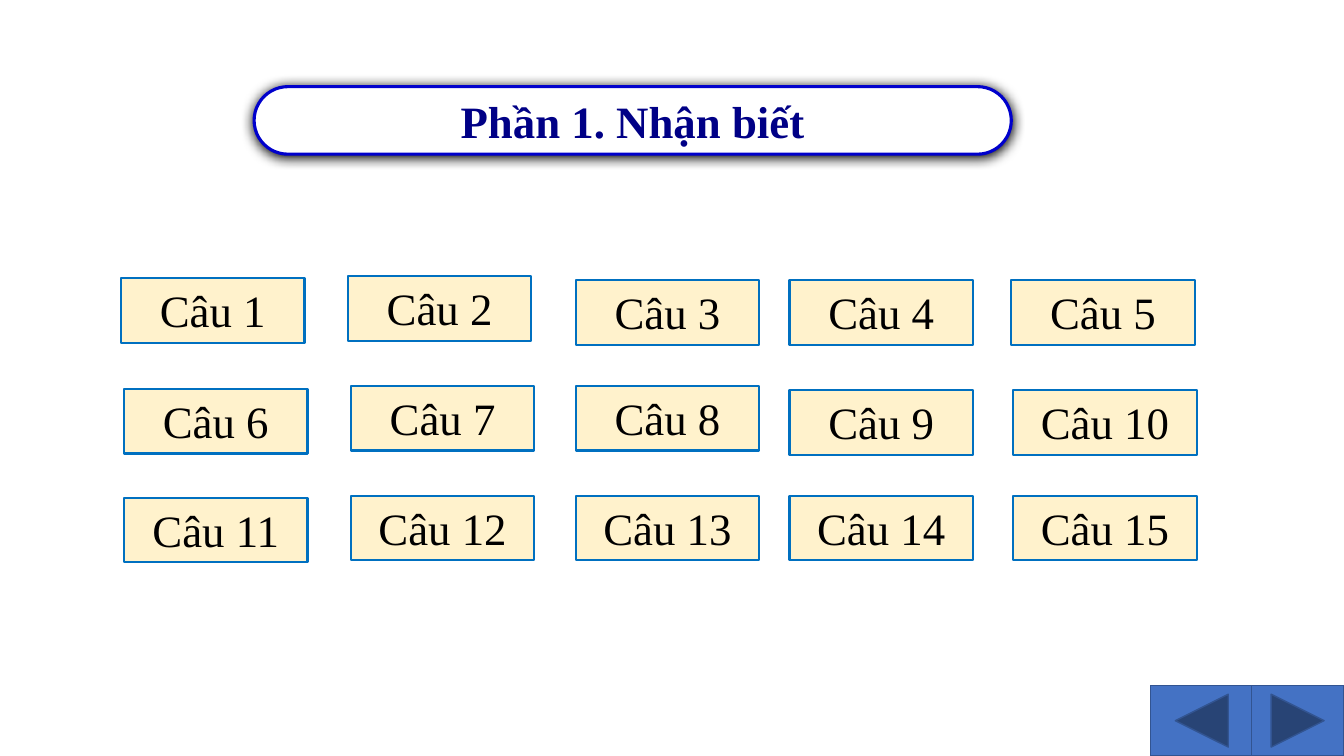
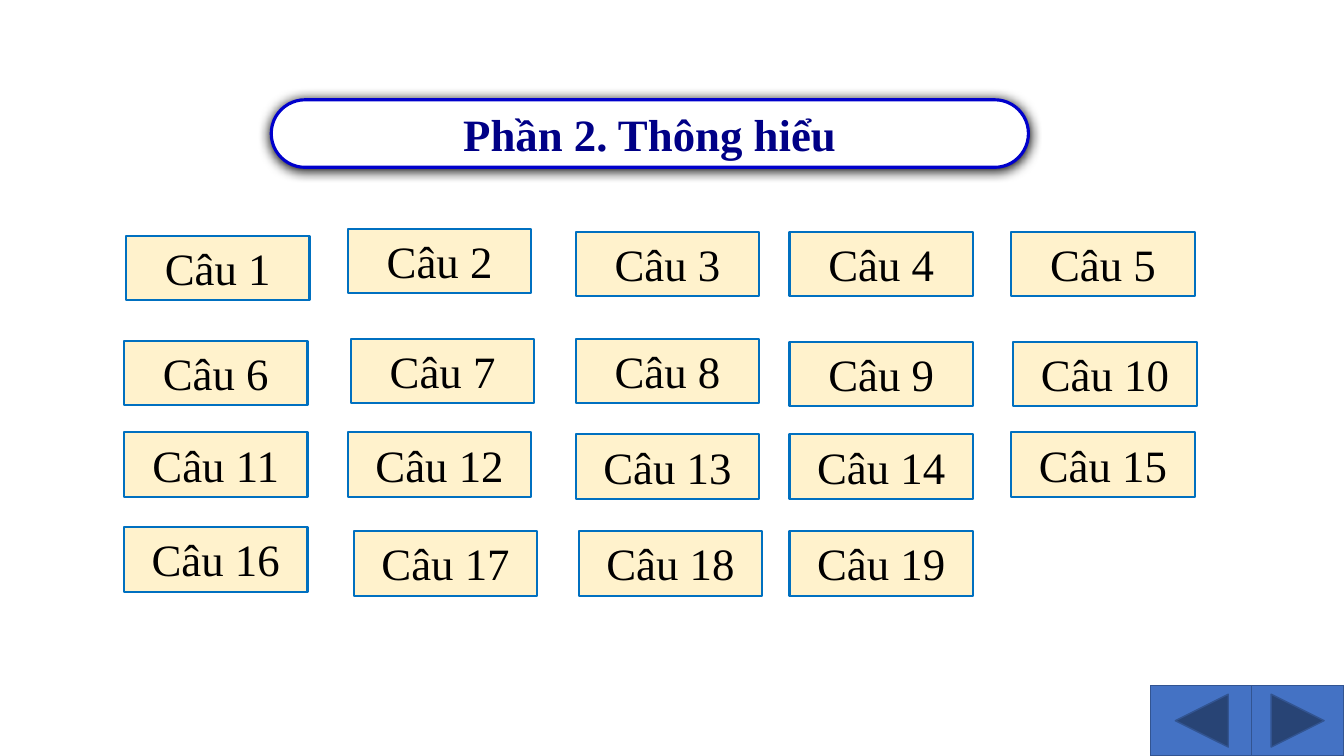
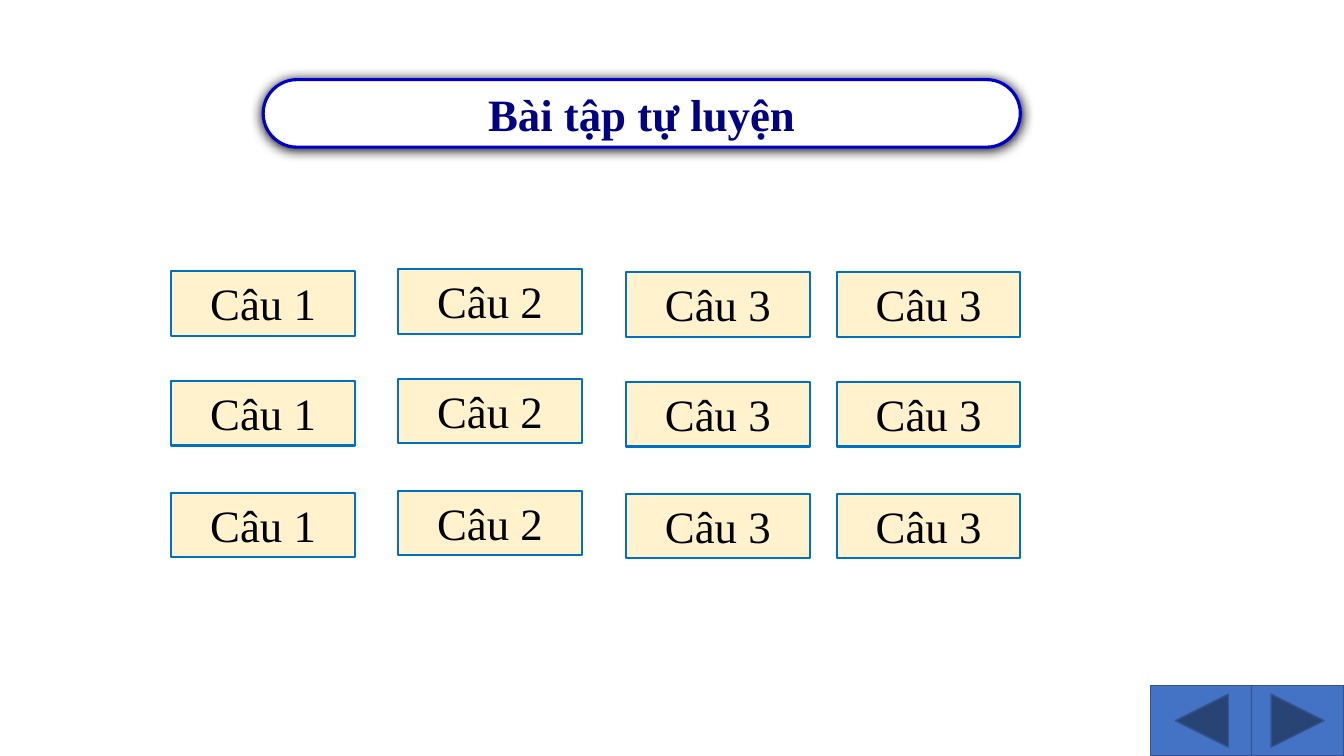
from dataclasses import dataclass

from lxml.etree import SubElement
from pptx import Presentation
from pptx.dml.color import RGBColor
from pptx.enum.shapes import MSO_SHAPE as Preset
from pptx.enum.text import MSO_ANCHOR as Anchor, MSO_AUTO_SIZE as AutoSize, PP_ALIGN as Align
from pptx.oxml.ns import qn
from pptx.shapes.autoshape import Shape
from pptx.slide import Slide
from pptx.util import Inches, Pt

FONT = "Times New Roman"
TEXT_SIZE = 32
WHITE, BLACK = "FFFFFF", "000000"
BANNER_LINE, BANNER_TEXT = "0000CC", "000086"
TILE_FILL, TILE_LINE = "FFF2CC", "0070C0"
BUTTON_FILL, BUTTON_LINE = "4472C4", "325491"

BANNER_WIDTH, BANNER_HEIGHT = 7.51, 0.67
TILE_WIDTH, TILE_HEIGHT = 1.82, 0.64
BUTTON_TOP, BUTTON_HEIGHT = 6.8, 0.7


@dataclass(frozen=True)
class TileRow:
    """Question numbers with the left and top edge of each tile."""
    numbers: tuple[int, ...]
    lefts: tuple[float, ...]
    tops: tuple[float, ...]


@dataclass(frozen=True)
class Menu:
    title: str
    left: float
    top: float
    rows: tuple[TileRow, ...]


@dataclass(frozen=True)
class Button:
    preset: Preset
    left: float
    width: float


BUTTONS = (
    Button(Preset.ACTION_BUTTON_BACK_OR_PREVIOUS, 11.41, 1.02),
    Button(Preset.ACTION_BUTTON_FORWARD_OR_NEXT, 12.41, 0.92),
)

FIRST_LEFTS = (1.2, 3.45, 5.71, 7.83, 10.03)
SECOND_LEFTS = (1.23, 3.48, 5.71, 7.83, 10.05)
EXERCISE_LEFTS = (1.7, 3.95, 6.21, 8.3)
EXERCISE_DROPS = (0.02, 0, 0.03, 0.03)

MENUS = (
    Menu("Phần 1. Nhận biết", 2.52, 0.86, (
        TileRow((1, 2, 3, 4, 5), FIRST_LEFTS, (2.76, 2.74, 2.78, 2.78, 2.78)),
        TileRow((6, 7, 8, 9, 10), SECOND_LEFTS, (3.86, 3.83, 3.83, 3.87, 3.87)),
        TileRow((11, 12, 13, 14, 15), SECOND_LEFTS, (4.94, 4.92, 4.92, 4.92, 4.92)),
    )),
    Menu("Phần 2. Thông hiểu", 2.69, 0.99, (
        TileRow((1, 2, 3, 4, 5), (1.25, *FIRST_LEFTS[1:]), (2.34, 2.27, 2.3, 2.3, 2.3)),
        TileRow((6, 7, 8, 9, 10), SECOND_LEFTS, (3.38, 3.36, 3.36, 3.39, 3.39)),
        TileRow((11, 12, 13, 14, 15), (1.23, *FIRST_LEFTS[1:]), (4.29, 4.29, 4.31, 4.31, 4.29)),
        TileRow((16, 17, 18, 19), (1.23, 3.51, 5.74, 7.83), (5.23, 5.27, 5.27, 5.27)),
    )),
    Menu("Bài tập tự luyện", 2.61, 0.79, tuple(
        TileRow((1, 2, 3, 3), EXERCISE_LEFTS, tuple(top + drop for drop in EXERCISE_DROPS))
        for top in (2.67, 3.76, 4.87)
    )),
)


def color(code: str) -> RGBColor:
    return RGBColor.from_string(code)


def add_box(slide: Slide, preset: Preset, left: float, top: float, width: float,
            height: float, fill: str, line: str, line_width: float) -> Shape:
    box = slide.shapes.add_shape(
        preset, Inches(left), Inches(top), Inches(width), Inches(height))
    box.shadow.inherit = False
    box.fill.solid()
    box.fill.fore_color.rgb = color(fill)
    box.line.color.rgb = color(line)
    box.line.width = Pt(line_width)
    return box


def write_text(box: Shape, text: str, text_color: str, bold: bool, anchor: Anchor) -> None:
    frame = box.text_frame
    frame.text = text
    frame.vertical_anchor = anchor
    para = frame.paragraphs[0]
    para.alignment = Align.CENTER
    para.font.name = FONT
    para.font.size = Pt(TEXT_SIZE)
    para.font.bold = bold
    para.font.color.rgb = color(text_color)


def add_soft_shadow(box: Shape) -> None:
    effects = box.element.spPr.find(qn("a:effectLst"))
    shadow = SubElement(effects, qn("a:outerShdw"), blurRad=str(Pt(8.5)), dist=str(Pt(1)),
                        dir="5400000", algn="ctr", rotWithShape="0")
    SubElement(shadow, qn("a:srgbClr"), val=BLACK)


def add_title(slide: Slide, menu: Menu) -> None:
    """Places the title placeholder over a rounded banner."""
    banner = add_box(slide, Preset.ROUNDED_RECTANGLE, menu.left, menu.top,
                     BANNER_WIDTH, BANNER_HEIGHT, WHITE, BANNER_LINE, 2.25)
    banner.adjustments[0] = 0.5
    add_soft_shadow(banner)

    title = slide.shapes.title
    title.left, title.top = banner.left, banner.top
    title.width, title.height = banner.width, banner.height
    write_text(title, menu.title, BANNER_TEXT, True, Anchor.MIDDLE)
    title.text_frame.auto_size = AutoSize.NONE
    title.element.addprevious(banner.element)


def add_tiles(slide: Slide, row: TileRow) -> None:
    for number, left, top in zip(row.numbers, row.lefts, row.tops):
        tile = add_box(slide, Preset.RECTANGLE, left, top, TILE_WIDTH, TILE_HEIGHT,
                       TILE_FILL, TILE_LINE, 1.5)
        write_text(tile, f"Câu {number}", BLACK, False, Anchor.TOP)
        tile.text_frame.word_wrap = True
        tile.text_frame.auto_size = AutoSize.SHAPE_TO_FIT_TEXT


def add_buttons(slide: Slide) -> None:
    for button in BUTTONS:
        add_box(slide, button.preset, button.left, BUTTON_TOP, button.width,
                BUTTON_HEIGHT, BUTTON_FILL, BUTTON_LINE, 1)


def main() -> None:
    deck = Presentation()
    deck.slide_width, deck.slide_height = Inches(13.33), Inches(7.5)
    title_only = deck.slide_layouts.get_by_name("Title Only")
    for menu in MENUS:
        slide = deck.slides.add_slide(title_only)
        add_title(slide, menu)
        for row in menu.rows:
            add_tiles(slide, row)
        add_buttons(slide)
    deck.save("out.pptx")


if __name__ == "__main__":
    main()
